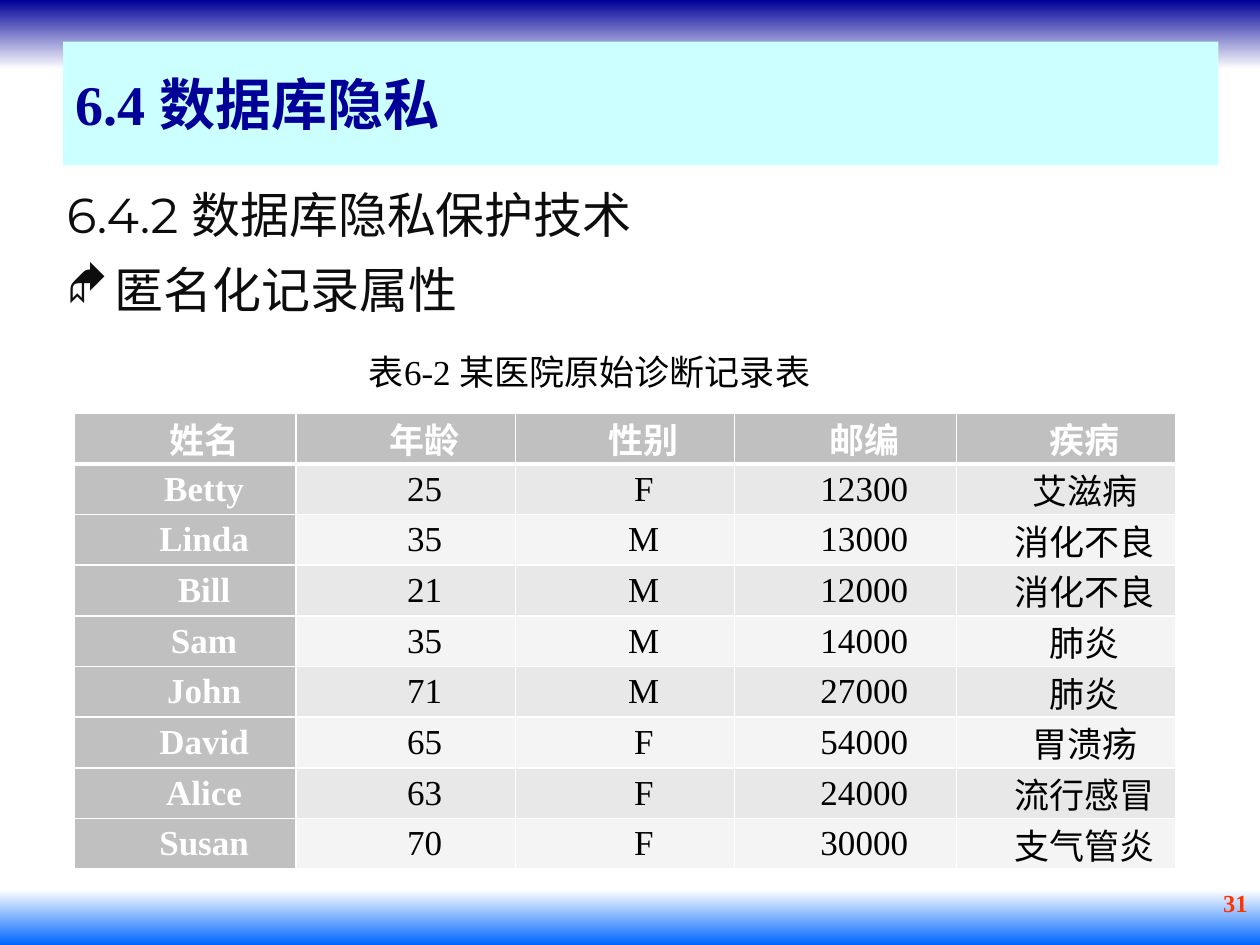
from dataclasses import dataclass

from lxml import etree
from pptx import Presentation
from pptx import util as u
from pptx.dml.color import RGBColor
from pptx.enum import shapes, text
from pptx.oxml import parse_xml
from pptx.oxml.ns import nsdecls, qn

WIDTH, HEIGHT = 10, 7.5
SERIF, SANS, SYMBOLS = "Times New Roman", "Montserrat", "Wingdings"
WHITE, BLACK, NAVY, GREY = "FFFFFF", "000000", "000099", "C0C0C0"
STRIPES = ("E8E8E8", "F4F4F4")
FIRST_LINE = 0.3

HEADINGS = ("姓名", "年龄", "性别", "邮编", "疾病")
RECORDS = (
    ("Betty", "25", "F", "12300", "艾滋病"),
    ("Linda", "35", "M", "13000", "消化不良"),
    ("Bill", "21", "M", "12000", "消化不良"),
    ("Sam", "35", "M", "14000", "肺炎"),
    ("John", "71", "M", "27000", "肺炎"),
    ("David", "65", "F", "54000", "胃溃疡"),
    ("Alice", "63", "F", "24000", "流行感冒"),
    ("Susan", "70", "F", "30000", "支气管炎"),
)
COLUMN_WIDTHS = (1.76, 1.74, 1.74, 1.76, 1.74)


@dataclass(frozen=True)
class Box:
    """Place on the slide, as shares of its width and height."""
    left: float
    top: float
    width: float
    height: float

    def emu(self) -> tuple:
        return (u.Inches(self.left * WIDTH), u.Inches(self.top * HEIGHT),
                u.Inches(self.width * WIDTH), u.Inches(self.height * HEIGHT))


@dataclass(frozen=True)
class Style:
    size: float
    color: str
    bold: bool = False
    face: str = SERIF
    align: text.PP_ALIGN = text.PP_ALIGN.LEFT


@dataclass(frozen=True)
class Band:
    box: Box
    top_color: str
    bottom_color: str


BANDS = (
    Band(Box(0, 0, 1, 0.0733), NAVY, WHITE),
    Band(Box(0, 0.9413, 1, 0.0587), WHITE, "0066FF"),
)
TITLE_BOX = Box(0.05, 0.044, 0.917, 0.1307)
BODY_BOX = Box(0.043, 0.1827, 0.939, 0.7453)
CAPTION_BOX = Box(0.203, 0.3633, 0.5, 0.0587)
NUMBER_BOX = Box(0.705, 0.9333, 0.295, 0.0667)
TABLE_BOX = Box(0.059, 0.4373, 0.874, 0.4827)

TITLE = Style(32, NAVY, bold=True)
BODY = Style(28, "0D0D0D", face=SANS)
CAPTION = Style(20, BLACK, align=text.PP_ALIGN.CENTER)
HEAD_CELL = Style(20, WHITE, bold=True, align=text.PP_ALIGN.CENTER)
NUMBER = Style(14, "FF3300", bold=True, align=text.PP_ALIGN.RIGHT)


def rgb(value: str) -> RGBColor:
    return RGBColor.from_string(value)


def write(paragraph, words: str, style: Style) -> None:
    paragraph.text = words
    paragraph.alignment = style.align
    font = paragraph.font
    font.name, font.size, font.bold = style.face, u.Pt(style.size), style.bold
    font.color.rgb = rgb(style.color)


def indent(paragraph, first_line: float, margin: float = 0) -> None:
    props = paragraph._p.get_or_add_pPr()
    props.set("marL", str(u.Inches(margin)))
    props.set("indent", str(u.Inches(first_line)))


def add_bullet(paragraph, mark: str, percent: int) -> None:
    props = paragraph._p.get_or_add_pPr()
    etree.SubElement(props, qn("a:buSzPct")).set("val", str(percent * 1000))
    etree.SubElement(props, qn("a:buFont")).set("typeface", SYMBOLS)
    etree.SubElement(props, qn("a:buChar")).set("char", mark)


def add_text_frame(slide, box: Box):
    frame = slide.shapes.add_textbox(*box.emu()).text_frame
    frame.word_wrap = True
    return frame


def draw_band(slide, band: Band) -> None:
    shape = slide.shapes.add_shape(shapes.MSO_SHAPE.RECTANGLE, *band.box.emu())
    shape.shadow.inherit = False
    shape.line.fill.background()
    shape.fill.gradient()
    shape.fill.gradient_angle = 270
    for stop, color, position in zip(shape.fill.gradient_stops,
                                     (band.top_color, band.bottom_color), (0, 1)):
        stop.color.rgb = rgb(color)
        stop.position = position


def draw_title(slide) -> None:
    title = slide.shapes.title
    title.left, title.top, title.width, title.height = TITLE_BOX.emu()
    title.fill.solid()
    title.fill.fore_color.rgb = rgb("CCFFFF")
    title.text_frame.vertical_anchor = text.MSO_ANCHOR.MIDDLE
    write(title.text_frame.paragraphs[0], "6.4 数据库隐私", TITLE)
    # Bring the title in front of the top band
    slide.shapes._spTree.append(title._element)


def draw_body(slide) -> None:
    frame = add_text_frame(slide, BODY_BOX)
    section, topic = frame.paragraphs[0], frame.add_paragraph()
    indent(topic, -0.38, margin=0.38)
    add_bullet(topic, "◆", 96)
    write(section, "6.4.2 数据库隐私保护技术", BODY)
    write(topic, "匿名化记录属性", BODY)
    section.line_spacing = topic.line_spacing = 1.1
    topic.space_before = u.Pt(0.2 * BODY.size)


def set_borders(cell, bottom: float) -> None:
    props = cell._tc.get_or_add_tcPr()
    sides = (("lnL", 1), ("lnR", 1), ("lnT", 1), ("lnB", bottom))
    for place, (side, points) in enumerate(sides):
        props.insert(place, parse_xml(
            f'<a:{side} {nsdecls("a")} w="{u.Pt(points)}"><a:solidFill>'
            f'<a:srgbClr val="{WHITE}"/></a:solidFill></a:{side}>'))


def fill_cell(cell, words: str, style: Style, color: str, bottom: float) -> None:
    cell.fill.solid()
    cell.fill.fore_color.rgb = rgb(color)
    cell.vertical_anchor = text.MSO_ANCHOR.MIDDLE
    cell.margin_left = cell.margin_right = u.Inches(0.08)
    cell.margin_top = cell.margin_bottom = 0
    paragraph = cell.text_frame.paragraphs[0]
    indent(paragraph, FIRST_LINE)
    write(paragraph, words, style)
    set_borders(cell, bottom)


def draw_records(slide) -> None:
    rows = (HEADINGS, *RECORDS)
    # The rows share the height of the table equally
    table = slide.shapes.add_table(len(rows), len(HEADINGS), *TABLE_BOX.emu()).table
    for column, width in zip(table.columns, COLUMN_WIDTHS):
        column.width = u.Inches(width)
    for r, row in enumerate(rows):
        for c, words in enumerate(row):
            is_head = r == 0 or c == 0
            fill_cell(table.cell(r, c), words,
                      HEAD_CELL if is_head else CAPTION,
                      GREY if is_head else STRIPES[(r - 1) % 2],
                      bottom=1 if r else 3)


def draw_caption(slide) -> None:
    frame = add_text_frame(slide, CAPTION_BOX)
    frame.vertical_anchor = text.MSO_ANCHOR.MIDDLE
    frame.auto_size = text.MSO_AUTO_SIZE.SHAPE_TO_FIT_TEXT
    indent(frame.paragraphs[0], FIRST_LINE)
    write(frame.paragraphs[0], "表6-2 某医院原始诊断记录表", CAPTION)


def main() -> None:
    deck = Presentation()
    deck.slide_width, deck.slide_height = u.Inches(WIDTH), u.Inches(HEIGHT)
    slide = deck.slides.add_slide(deck.slide_layouts[5])

    # Background bands and page number
    for band in BANDS:
        draw_band(slide, band)
    write(add_text_frame(slide, NUMBER_BOX).paragraphs[0], "31", NUMBER)

    # Headings, diagnosis table and its caption
    draw_title(slide)
    draw_body(slide)
    draw_records(slide)
    draw_caption(slide)
    deck.save("out.pptx")


if __name__ == "__main__":
    main()
